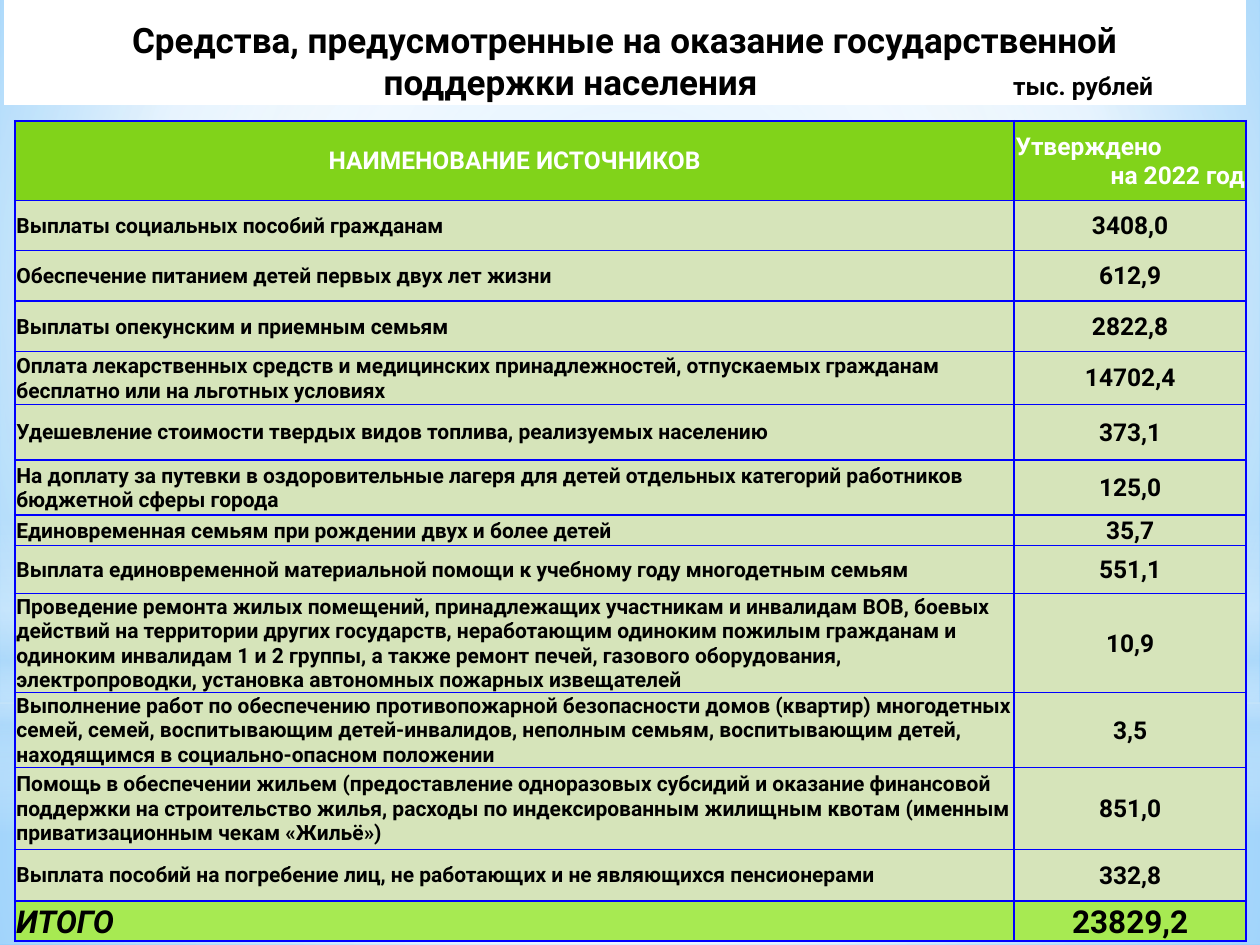
from lxml import etree
from pptx import Presentation
from pptx.dml.color import RGBColor
from pptx.enum.shapes import MSO_SHAPE
from pptx.enum.text import MSO_ANCHOR, PP_ALIGN
from pptx.oxml.ns import qn
from pptx.util import Inches, Pt

LEFT, CENTER, RIGHT = PP_ALIGN.LEFT, PP_ALIGN.CENTER, PP_ALIGN.RIGHT
MIDDLE, BOTTOM = MSO_ANCHOR.MIDDLE, MSO_ANCHOR.BOTTOM
RECT, OVAL = MSO_SHAPE.RECTANGLE, MSO_SHAPE.OVAL

ROWS = [
    ("Выплаты социальных пособий гражданам", "3408,0", 0.4),
    ("Обеспечение питанием детей первых двух лет жизни", "612,9", 0.4),
    ("Выплаты опекунским и приемным семьям", "2822,8", 0.4),
    ("Оплата лекарственных средств и медицинских принадлежностей, отпускаемых "
     "гражданам бесплатно или на льготных условиях", "14702,4", 0.42),
    ("Удешевление стоимости твердых видов топлива, реализуемых населению", "373,1", 0.44),
    ("На доплату за путевки в оздоровительные лагеря для детей отдельных категорий "
     "работников бюджетной сферы города", "125,0", 0.44),
    ("Единовременная семьям при рождении двух и более детей", "35,7", 0.23),
    ("Выплата единовременной материальной помощи к учебному году многодетным семьям",
     "551,1", 0.38),
    ("Проведение ремонта жилых помещений, принадлежащих участникам и инвалидам ВОВ, "
     "боевых действий на территории других государств, неработающим одиноким пожилым "
     "гражданам и одиноким инвалидам 1 и 2 группы, а также ремонт печей, газового "
     "оборудования, электропроводки, установка автономных пожарных извещателей",
     "10,9", 0.78),
    ("Выполнение работ по обеспечению противопожарной безопасности домов (квартир) "
     "многодетных семей, семей, воспитывающим детей-инвалидов, неполным семьям, "
     "воспитывающим детей, находящимся в социально-опасном положении", "3,5", 0.59),
    ("Помощь в обеспечении жильем (предоставление одноразовых субсидий и оказание "
     "финансовой поддержки на строительство жилья, расходы по индексированным жилищным "
     "квотам (именным приватизационным чекам «Жильё»)", "851,0", 0.65),
    ("Выплата пособий на погребение лиц, не работающих и не являющихся пенсионерами",
     "332,8", 0.41),
]


def rgb(value):
    """Return the colour for a hex string."""
    return RGBColor.from_string(value)


def sub(parent, tag, **attrs):
    """Append a DrawingML child with the given attributes."""
    return etree.SubElement(parent, qn(tag), {k: str(v) for k, v in attrs.items()})


class SlideBuilder:
    """Hold the style and the current slide."""

    font = "Roboto"
    border = "0000FF"
    margins = {"margin_left": Inches(0.01), "margin_right": Inches(0.01),
               "margin_top": Inches(0.01), "margin_bottom": 0}

    def __init__(self, prs):
        """Add a blank slide."""
        self.s = prs.slides.add_slide(prs.slide_layouts[6])

    def gradient(self, fill, owner, stops, to=None):
        """Fill with a vertical gradient, or a circular one around a focus."""
        fill.gradient()
        grad = next(owner.iter(qn("a:gradFill")))
        for child in list(grad):
            grad.remove(child)
        gs_list = sub(grad, "a:gsLst")
        for pos, color, alpha in stops:
            gs = sub(gs_list, "a:gs", pos=pos * 1000)
            clr = sub(gs, "a:srgbClr", val=color)
            sub(clr, "a:alpha", val=alpha * 1000)
        if to:
            path = sub(grad, "a:path", path="circle")
            sub(path, "a:fillToRect", **{k: v * 1000 for k, v in zip("ltrb", to)})
        else:
            sub(grad, "a:lin", ang=5400000, scaled=0)

    def background(self, stops, to):
        """Give the slide a gradient background."""
        self.gradient(self.s.background.fill, self.s.element, stops, to)

    def glow(self, kind, top, height, stops, to=None):
        """Add a full-width translucent band."""
        sp = self.s.shapes.add_shape(kind, 0, Inches(top), Inches(10), Inches(height))
        sp.shadow.inherit = False
        sp.line.fill.background()
        self.gradient(sp.fill, sp.element, stops, to)

    def table(self, left, top, cols, rows):
        """Add an unbanded table with the given column and row sizes."""
        tbl = self.s.shapes.add_table(len(rows), len(cols), Inches(left), Inches(top),
                                      Inches(sum(cols)), Inches(sum(rows))).table
        tbl.first_row = tbl.horz_banding = False
        for col, width in zip(tbl.columns, cols):
            col.width = Inches(width)
        for row, height in zip(tbl.rows, rows):
            row.height = Inches(height)
        return tbl

    def cell(self, cell, fill, anchor=MIDDLE):
        """Set the fill, anchor and margins of a cell."""
        for key, value in {**self.margins, "vertical_anchor": anchor}.items():
            setattr(cell, key, value)
        cell.fill.solid()
        cell.fill.fore_color.rgb = rgb(fill)

    def borders(self, cell, **widths):
        """Draw the cell borders, given in points by side."""
        tc_pr = cell._tc.get_or_add_tcPr()
        for i, (side, width) in enumerate(widths.items()):
            ln = etree.Element(qn("a:ln" + side), {"w": str(Pt(width))})
            sub(sub(ln, "a:solidFill"), "a:srgbClr", val=self.border)
            tc_pr.insert(i, ln)

    def text(self, cell, lines, color="000000", spacing=None):
        """Write (alignment, [(text, size, italic)]) paragraphs into a cell."""
        tf = cell.text_frame
        for i, (align, runs) in enumerate(lines):
            p = tf.add_paragraph() if i else tf.paragraphs[0]
            p.alignment = align
            p.line_spacing = spacing
            for text, size, italic in runs:
                r = p.add_run()
                r.text = text
                style = {"name": self.font, "size": Pt(size), "bold": True, "italic": italic}
                for key, value in style.items():
                    setattr(r.font, key, value)
                r.font.color.rgb = rgb(color)

    def tabs(self, cell, stops):
        """Set the tab stops of a cell's first paragraph."""
        tab_list = sub(cell.text_frame.paragraphs[0]._p.get_or_add_pPr(), "a:tabLst")
        for pos, align in stops:
            sub(tab_list, "a:tab", pos=Inches(pos), algn=align)

    def heading(self):
        """Add the heading block with the unit beside its second line."""
        tbl = self.table(0.04, -0.04, [9.84], [0.53, 0.34])
        first, second = tbl.cell(0, 0), tbl.cell(1, 0)
        for cell in (first, second):
            self.cell(cell, "FFFFFF", BOTTOM)
        self.text(first, [(CENTER, [
            ("Средства, предусмотренные на оказание государственной", 20, False)])])
        self.text(second, [(LEFT, [("\tподдержки населения", 20, False),
                                   ("\tтыс. рублей", 14, False)])])
        self.tabs(second, [(4.48, "ctr"), (7.99, "l")])

    def funding(self):
        """Add the table of funds with its header and total."""
        tbl = self.table(0.12, 0.96, [7.93, 1.84], [0.63, *(h for *_, h in ROWS), 0.32])
        last = len(ROWS) + 1
        for i in range(last + 1):
            fill = {0: "81D31A", last: "A7EA52"}.get(i, "D6E4BA")
            for j in range(2):
                cell = tbl.cell(i, j)
                self.cell(cell, fill, BOTTOM if i == last else MIDDLE)
                self.borders(cell, L=1.5, R=1 if j else 1.5, T=1 if i else 1.5,
                             B=1.5 if i == last else 1)
        self.text(tbl.cell(0, 0), [(CENTER, [("НАИМЕНОВАНИЕ ИСТОЧНИКОВ", 14, False)])], "FFFFFF")
        self.text(tbl.cell(0, 1), [(LEFT, [("Утверждено", 14, False)]),
                                   (RIGHT, [("на 2022 год", 14, False)])], "FFFFFF")
        for i, (name, amount, _) in enumerate(ROWS, 1):
            self.text(tbl.cell(i, 0), [(LEFT, [(name, 12, False)])], spacing=Pt(14))
            self.text(tbl.cell(i, 1), [(CENTER, [(amount, 14, False)])])
        self.text(tbl.cell(last, 0), [(LEFT, [("ИТОГО", 18, True)])])
        self.text(tbl.cell(last, 1), [(CENTER, [("23829,2", 18, False)])])


def main():
    """Build and save the slide."""
    prs = Presentation()
    prs.slide_width, prs.slide_height = Inches(10), Inches(7.5)
    b = SlideBuilder(prs)
    middle = (50, 50, 50, 50)
    b.background([(0, "9ED5FF", 100), (60, "FFFFFF", 100), (100, "5BB9FF", 100)],
                 (20, 10, 20, 60))
    b.glow(RECT, 5.58, 1.92, [(0, "FFFFFF", 91), (37, "FFFFFF", 76), (100, "B4DCFA", 79)], middle)
    b.glow(RECT, 0, 5.58, [(0, "FFFFFF", 89), (48, "FFFFFF", 62), (100, "B4DCFA", 79)], middle)
    b.glow(RECT, 4.12, 2.5, [(0, "FFFFFF", 0), (29, "FFFFFF", 30), (45, "B4DCFA", 40),
                             (55, "FFFFFF", 26), (65, "B4DCFA", 60), (100, "FFFFFF", 0)])
    b.glow(OVAL, 1.75, 5.58, [(0, "FFFFFF", 100), (56, "FFFFFF", 0)], middle)
    b.funding()
    b.heading()
    prs.save("out.pptx")


if __name__ == "__main__":
    main()
